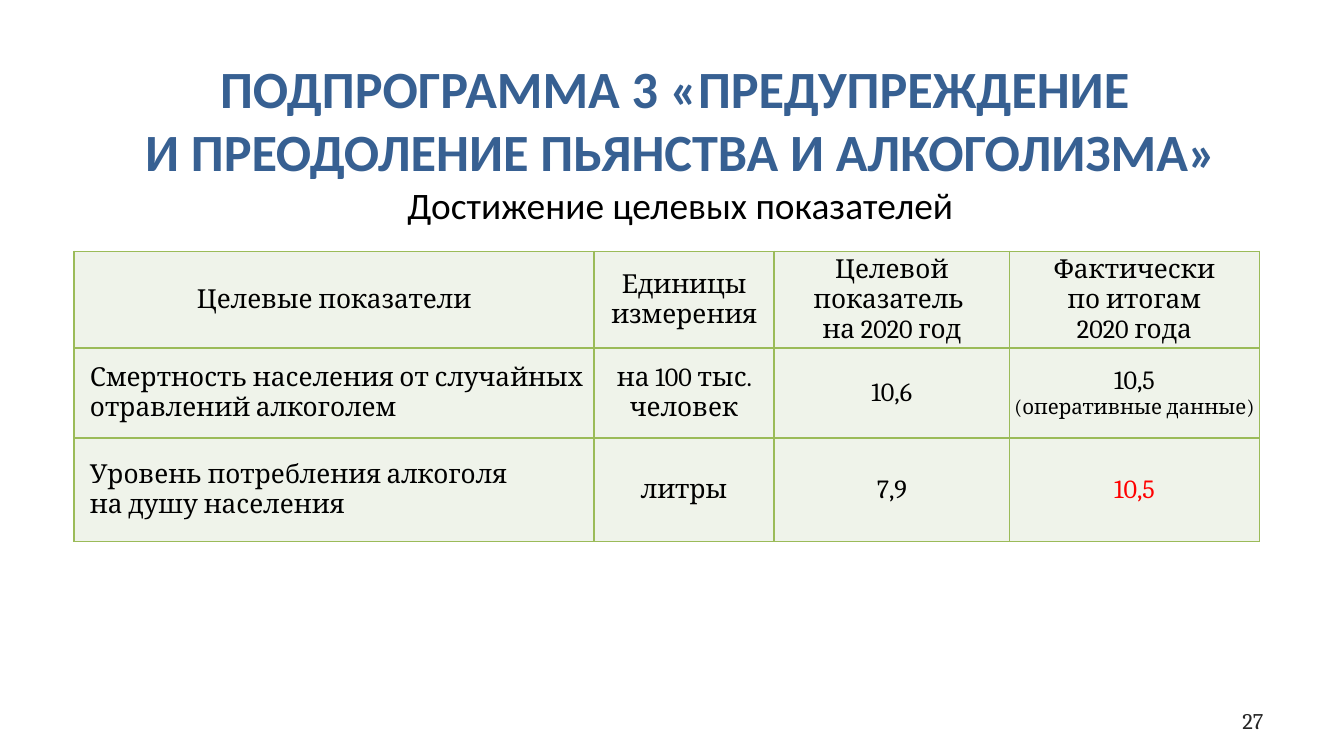
from pptx import Presentation
from pptx.dml.color import RGBColor
from pptx.enum.text import MSO_ANCHOR as Anchor, MSO_AUTO_SIZE as Fit, PP_ALIGN as Align
from pptx.oxml import parse_xml
from pptx.oxml.ns import nsdecls
from pptx.util import Cm, Pt

TITLE = [
    ("ПОДПРОГРАММА 3 «ПРЕДУПРЕЖДЕНИЕ \vИ ПРЕОДОЛЕНИЕ ПЬЯНСТВА И АЛКОГОЛИЗМА»", "head"),
    ("Достижение целевых показателей", "sub"),
]
ROWS = [
    [[("Целевые показатели", "cell")],
     [("Единицы измерения", "cell")],
     [("Целевой показатель \vна 2020 год", "cell")],
     [("Фактически\vпо итогам", "cell"), ("2020 года", "cell")]],
    [[("Смертность населения от случайных отравлений алкоголем", "left")],
     [("на 100 тыс. человек", "cell")],
     [("10,6", "cell")],
     [("10,5", "cell"), ("(оперативные данные)", "note")]],
    [[("Уровень потребления алкоголя\vна душу населения", "left")],
     [("литры", "cell")],
     [("7,9", "cell")],
     [("10,5", "alert")]],
]
PAGE = [("27", "page")]

WIDTHS = [9.83, 3.4, 4.45, 4.72]
HEIGHTS = [1.82, 1.7, 1.96]
FILL, EDGE = "EFF3EA", "9BBB59"

CELL = dict(name="Cambria", size=14, bold=False, color="000000", align=Align.CENTER)
STYLES = {
    "head": dict(name="Calibri", size=28, bold=True, color="376092", align=Align.CENTER),
    "sub": dict(name="Calibri", size=20, bold=False, color="000000", align=Align.CENTER),
    "cell": CELL,
    "left": CELL | dict(align=Align.LEFT),
    "note": CELL | dict(size=11),
    "alert": CELL | dict(color="FF0000"),
    "page": CELL | dict(size=12, color="262626", align=Align.RIGHT),
}


def paint(target, code):
    target.rgb = RGBColor.from_string(code)


def write(frame, lines):
    for i, (text, key) in enumerate(lines):
        para = frame.add_paragraph() if i else frame.paragraphs[0]
        para.text = text
        style = STYLES[key]
        para.alignment = style["align"]
        paint(para.font.color, style["color"])
        for run in para.runs:
            for attr in ("name", "bold"):
                setattr(run.font, attr, style[attr])
            run.font.size = Pt(style["size"])
            paint(run.font.color, style["color"])


def place(shape, left, top, width, height):
    box = dict(left=left, top=top, width=width, height=height)
    for attr, value in box.items():
        setattr(shape, attr, Cm(value))


def frame_cell(cell):
    props = cell._tc.get_or_add_tcPr()
    for i, side in enumerate(("lnL", "lnR", "lnT", "lnB")):
        props.insert(i, parse_xml(
            f'<a:{side} {nsdecls("a")} w="{Pt(1)}"><a:solidFill>'
            f'<a:srgbClr val="{EDGE}"/></a:solidFill></a:{side}>'))


def fill_table(table):
    for col, width in zip(table.columns, WIDTHS):
        col.width = Cm(width)
    for row, height, data in zip(table.rows, HEIGHTS, ROWS):
        row.height = Cm(height)
        for cell, lines in zip(row.cells, data):
            write(cell.text_frame, lines)
            left = 0.3 if lines[0][1] == "left" else 0.03
            form = dict(vertical_anchor=Anchor.MIDDLE, margin_left=Cm(left),
                        margin_right=Cm(0.03), margin_top=Cm(0.03), margin_bottom=Cm(0.03))
            for attr, value in form.items():
                setattr(cell, attr, value)
            cell.fill.solid()
            paint(cell.fill.fore_color, FILL)
            frame_cell(cell)


def main():
    deck = Presentation()
    deck.slide_width, deck.slide_height = Cm(25.4), Cm(14.28)
    slide = deck.slides.add_slide(deck.slide_layouts[5])
    shapes = slide.shapes

    title = shapes.title
    place(title, 0.36, 0.94, 25, 3.5)
    write(title.text_frame, TITLE)
    form = dict(vertical_anchor=Anchor.TOP, word_wrap=True, auto_size=Fit.NONE)
    for attr, value in form.items():
        setattr(title.text_frame, attr, value)

    grid = shapes.add_table(len(HEIGHTS), len(WIDTHS), Cm(1.4), Cm(4.75),
                            Cm(sum(WIDTHS)), Cm(sum(HEIGHTS)))
    fill_table(grid.table)

    page = shapes.add_textbox(Cm(18.21), Cm(13.23), Cm(5.92), Cm(0.76))
    write(page.text_frame, PAGE)
    page.text_frame.word_wrap = True
    page.text_frame.vertical_anchor = Anchor.MIDDLE

    deck.save("out.pptx")


if __name__ == "__main__":
    main()
